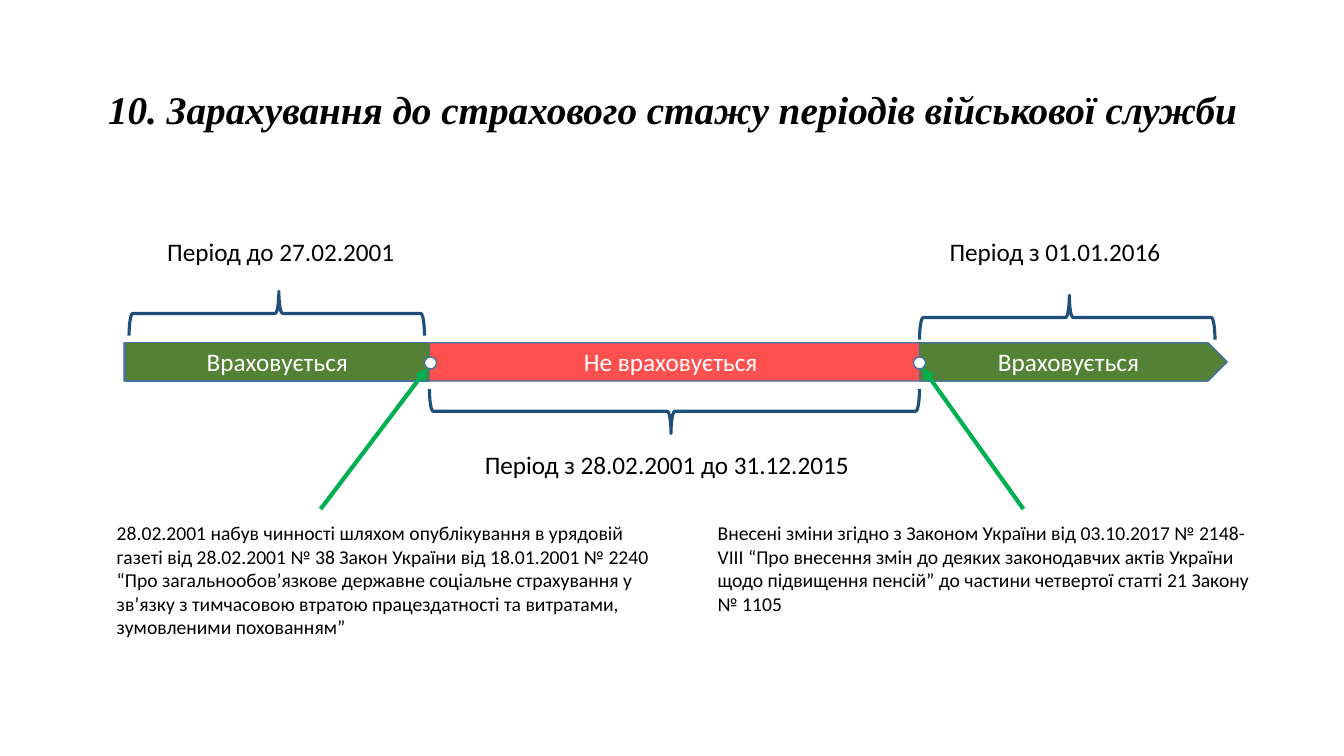
from dataclasses import dataclass

from lxml import etree
from pptx import Presentation
from pptx.dml.color import RGBColor
from pptx.enum.shapes import MSO_CONNECTOR, MSO_SHAPE
from pptx.enum.text import MSO_ANCHOR, MSO_AUTO_SIZE, PP_ALIGN
from pptx.oxml.ns import qn
from pptx.util import Inches, Pt

RECTANGLE, PENTAGON = MSO_SHAPE.RECTANGLE, MSO_SHAPE.PENTAGON
BRACE, OVAL = MSO_SHAPE.LEFT_BRACE, MSO_SHAPE.OVAL
STRAIGHT = MSO_CONNECTOR.STRAIGHT
TOP, MIDDLE = MSO_ANCHOR.TOP, MSO_ANCHOR.MIDDLE
LEFT, CENTER = PP_ALIGN.LEFT, PP_ALIGN.CENTER
NO_FIT, GROW = MSO_AUTO_SIZE.NONE, MSO_AUTO_SIZE.SHAPE_TO_FIT_TEXT


@dataclass(frozen=True)
class Theme:
    text: RGBColor = RGBColor.from_string("000000")
    white: RGBColor = RGBColor.from_string("FFFFFF")
    counted: RGBColor = RGBColor.from_string("548235")
    excluded: RGBColor = RGBColor.from_string("FF5050")
    outline: RGBColor = RGBColor.from_string("43739E")
    brace: RGBColor = RGBColor.from_string("1F4E79")
    arrow: RGBColor = RGBColor.from_string("00B050")
    title_font: str = "Times New Roman"
    body_font: str = "Calibri"
    title_size: int = 28
    label_size: int = 18
    note_size: int = 14


THEME = Theme()

# Timeline geometry in inches
BAR_TOP, BAR_HEIGHT = 3.4, 0.38
BRACE_DEPTH = 0.44
DOT_SIZE, DOT_TOP = 0.12, 3.54
ARROW_START, ARROW_END = 5.05, 3.65

# Kind, left, width, colour, wording; the red bar lies behind the green ones
BARS = [
    (PENTAGON, 1.23, 10.94, THEME.excluded, "Не враховується"),
    (RECTANGLE, 1.24, 3.02, THEME.counted, "Враховується"),
    (PENTAGON, 9.12, 3.05, THEME.counted, "Враховується"),
]
# Left, top, span, rotation
BRACES = [(1.28, 2.89, 2.93, 90), (9.12, 2.93, 2.93, 90), (4.26, 3.86, 4.86, 270)]
DOT_LEFTS = [4.21, 9.06]
# Left, top, width, wording
LABELS = [
    (1.56, 2.3, 2.53, "Період до 27.02.2001"),
    (9.32, 2.3, 2.53, "Період з 01.01.2016"),
    (4.71, 4.41, 3.92, "Період з 28.02.2001 до 31.12.2015"),
]
# Left, width, height, arrow start, arrow end, wording
NOTES = [
    (1.06, 5.64, 1.28, 3.18, 4.24,
     "28.02.2001 набув чинності шляхом опублікування в урядовій газеті "
     "від 28.02.2001 № 38 Закон України від 18.01.2001 № 2240 “Про "
     "загальнообов’язкове державне соціальне страхування у зв’язку з "
     "тимчасовою втратою працездатності та витратами, зумовленими похованням”"),
    (7.02, 5.54, 1.04, 10.15, 9.15,
     "Внесені зміни згідно з Законом України від 03.10.2017 № 2148-VIII "
     "“Про внесення змін до деяких законодавчих актів України щодо "
     "підвищення пенсій” до частини четвертої статті 21 Закону № 1105"),
]


def write(frame, text, size, color, align=LEFT, font=THEME.body_font):
    frame.word_wrap = True
    frame.text = text
    para = frame.paragraphs[0]
    para.alignment = align
    span = para.runs[0]
    span.font.size = Pt(size)
    span.font.name = font
    span.font.color.rgb = color
    return para


def set_title(page, text):
    title = page.shapes.title
    title.left, title.top = Inches(0.92), Inches(0.85)
    title.width, title.height = Inches(11.5), Inches(0.6)
    frame = title.text_frame
    frame.vertical_anchor = TOP
    frame.auto_size = NO_FIT
    para = write(frame, text, THEME.title_size, THEME.text, CENTER, THEME.title_font)
    para.line_spacing = 0.9
    para.runs[0].font.bold = True
    para.runs[0].font.italic = True


def add_figure(page, kind, left, top, width, height, fill, line, weight=1):
    shape = page.shapes.add_shape(
        kind, Inches(left), Inches(top), Inches(width), Inches(height))
    shape.shadow.inherit = False
    if fill is None:
        shape.fill.background()
    else:
        shape.fill.solid()
        shape.fill.fore_color.rgb = fill
    shape.line.color.rgb = line
    shape.line.width = Pt(weight)
    return shape


def add_bar(page, kind, left, width, fill, text):
    bar = add_figure(page, kind, left, BAR_TOP, width, BAR_HEIGHT, fill, THEME.outline)
    bar.text_frame.vertical_anchor = MIDDLE
    write(bar.text_frame, text, THEME.label_size, THEME.white, CENTER)


def add_brace(page, left, top, span, rotation):
    # The unrotated frame shares its centre with the turned brace
    shift = (span - BRACE_DEPTH) / 2
    brace = add_figure(page, BRACE, left + shift, top - shift, BRACE_DEPTH, span,
                       None, THEME.brace, 2.25)
    brace.adjustments[0] = 0.083
    brace.adjustments[1] = 0.493
    brace.rotation = rotation


def add_text(page, left, top, width, height, text, size):
    box = page.shapes.add_textbox(
        Inches(left), Inches(top), Inches(width), Inches(height))
    write(box.text_frame, text, size, THEME.text)
    box.text_frame.auto_size = GROW


def add_arrow(page, start, end):
    arrow = page.shapes.add_connector(
        STRAIGHT, Inches(start), Inches(ARROW_START), Inches(end), Inches(ARROW_END))
    arrow.line.color.rgb = THEME.arrow
    arrow.line.width = Pt(3)
    properties = arrow._element.spPr
    etree.SubElement(properties.find(qn("a:ln")), qn("a:tailEnd"), type="triangle")
    etree.SubElement(properties, qn("a:effectLst"))


def main():
    deck = Presentation()
    deck.slide_width, deck.slide_height = Inches(13.33), Inches(7.5)
    page = deck.slides.add_slide(deck.slide_layouts[5])
    set_title(page, "10. Зарахування до страхового стажу періодів військової служби")

    # Timeline with its braces and turning points
    for bar in BARS:
        add_bar(page, *bar)
    for brace in BRACES:
        add_brace(page, *brace)
    for left in DOT_LEFTS:
        add_figure(page, OVAL, left, DOT_TOP, DOT_SIZE, DOT_SIZE,
                   THEME.white, THEME.outline)

    # Period labels
    for left, top, width, text in LABELS:
        add_text(page, left, top, width, 0.4, text, THEME.label_size)

    # Legal notes, each with an arrow to its turning point
    for left, width, height, start, end, text in NOTES:
        add_arrow(page, start, end)
        add_text(page, left, 5.12, width, height, text, THEME.note_size)

    deck.save("out.pptx")


if __name__ == "__main__":
    main()
